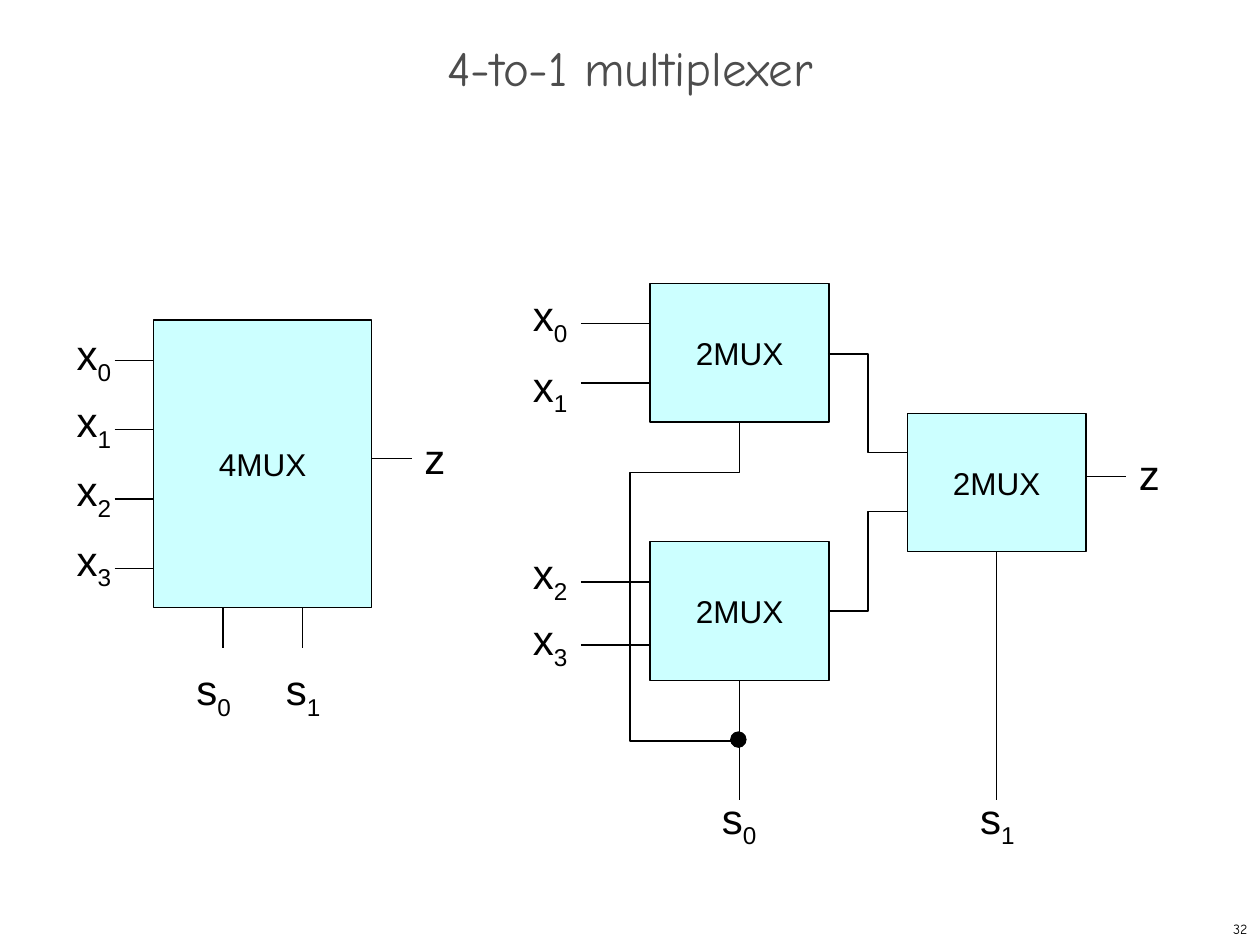
"""Build a slide showing a 4-to-1 multiplexer made of 2-to-1 multiplexers."""
from lxml.etree import SubElement
from pptx import Presentation
from pptx.dml.color import RGBColor
from pptx.enum.shapes import MSO_CONNECTOR as CONNECTOR, MSO_SHAPE as SHAPE
from pptx.enum.text import MSO_ANCHOR as ANCHOR, MSO_AUTO_SIZE as AUTO_SIZE, PP_ALIGN as ALIGN
from pptx.oxml.ns import qn
from pptx.util import Inches, Pt

BLACK = RGBColor(0x00, 0x00, 0x00)
GREY = RGBColor(0x4D, 0x4D, 0x4D)
CYAN = RGBColor(0xCC, 0xFF, 0xFF)

presentation = Presentation()
presentation.slide_width, presentation.slide_height = Inches(10), Inches(7.5)
UNIT = presentation.slide_width // 100
slide = presentation.slides.add_slide(presentation.slide_layouts[5])
shapes = slide.shapes


def grid(*values):
    return [round(value * UNIT) for value in values]


def add_run(paragraph, text, size, font="Arial", color=BLACK):
    run = paragraph.add_run()
    run.text = text
    run.font.size, run.font.name = Pt(size), font
    run.font.color.rgb = color
    return run


title = shapes.title
title.left, title.top, title.width, title.height = grid(0, 3.4, 100, 5)
title.text_frame.vertical_anchor = ANCHOR.MIDDLE
paragraph = title.text_frame.paragraphs[0]
paragraph.alignment, paragraph.line_spacing = ALIGN.CENTER, 0.7
add_run(paragraph, "4-to-1 multiplexer", 28, "Comic Neue", GREY)

page_number = shapes.add_textbox(*grid(79.2, 72.5, 20.8, 2.5))
page_number.text_frame.vertical_anchor = ANCHOR.MIDDLE
paragraph = page_number.text_frame.paragraphs[0]
paragraph.alignment = ALIGN.RIGHT
add_run(paragraph, "32", 8, "Comic Neue")

blocks = [
    ("4MUX", 12.2, 25.4, 17.3, 22.8),
    ("2MUX", 51.6, 22.5, 14.2, 11),
    ("2MUX", 51.6, 43, 14.2, 11),
    ("2MUX", 72, 32.8, 14.2, 11),
]
for name, *box in blocks:
    block = shapes.add_shape(SHAPE.RECTANGLE, *grid(*box))
    block.shadow.inherit = False
    block.fill.solid()
    block.fill.fore_color.rgb = CYAN
    block.line.color.rgb, block.line.width = BLACK, Pt(0.75)
    block.text_frame.word_wrap = False
    block.text_frame.vertical_anchor = ANCHOR.MIDDLE
    paragraph = block.text_frame.paragraphs[0]
    paragraph.alignment = ALIGN.CENTER
    add_run(paragraph, name, 18)

wires = [(9.1, 28.6 + 5.5 * row, 12.2, 28.6 + 5.5 * row) for row in range(4)]
wires += [(46.1, y, 51.6, y) for y in (25.7, 30.4, 46.2, 51.2)]
wires += [(x, 51.4, x, 48.2) for x in (17.7, 24)]
wires += [
    (29.5, 36.4, 32.7, 36.4),
    (86.2, 37.8, 89.4, 37.8),
    (58.7, 54, 58.7, 63.5),
    (79.1, 43.8, 79.1, 63.5),
]
for ends in wires:
    wire = shapes.add_connector(CONNECTOR.STRAIGHT, *grid(*ends))
    wire.line.color.rgb, wire.line.width = BLACK, Pt(0.75)
    SubElement(wire.element.spPr, qn("a:effectLst"))

bent_wires = [
    [(65.7, 28.1), (68.9, 28.1), (68.9, 35.9), (72, 35.9)],
    [(65.7, 48.5), (68.9, 48.5), (68.9, 40.6), (72, 40.6)],
    [(58.7, 33.6), (58.7, 37.5), (50, 37.5), (50, 58.8), (58.7, 58.8)],
]
for start, *corners in bent_wires:
    builder = shapes.build_freeform(*grid(*start))
    builder.add_line_segments([grid(*corner) for corner in corners], close=False)
    bent_wire = builder.convert_to_shape()
    bent_wire.shadow.inherit = False
    bent_wire.fill.background()
    bent_wire.line.color.rgb, bent_wire.line.width = BLACK, Pt(0.75)

junction = shapes.add_shape(SHAPE.OVAL, *grid(58, 58.1, 1.2, 1.2))
junction.shadow.inherit = False
junction.fill.solid()
junction.fill.fore_color.rgb = BLACK
junction.line.color.rgb, junction.line.width = BLACK, Pt(0.75)

labels = [("x", str(row), 5.1, y) for row, y in enumerate((25.6, 30.9, 36.4, 41.9))]
labels += [("x", str(row), 41.3, y) for row, y in enumerate((22.5, 28.1, 43, 48.2))]
labels += [("s", str(column), x, 52.2) for column, x in enumerate((14.6, 21.7))]
labels += [("s", str(column), x, 62.4) for column, x in enumerate((56.3, 76.8))]
labels += [("z", "", 32.7, 33.8), ("z", "", 89.4, 35.1)]
for letter, index, left, top in labels:
    label = shapes.add_textbox(*grid(left, top, 5.5, 5))
    label.text_frame.word_wrap = True
    label.text_frame.auto_size = AUTO_SIZE.SHAPE_TO_FIT_TEXT
    paragraph = label.text_frame.paragraphs[0]
    add_run(paragraph, letter, 24)
    if index:
        subscript = add_run(paragraph, index, 24)
        subscript.font._element.set("baseline", "-25000")

presentation.save("out.pptx")
